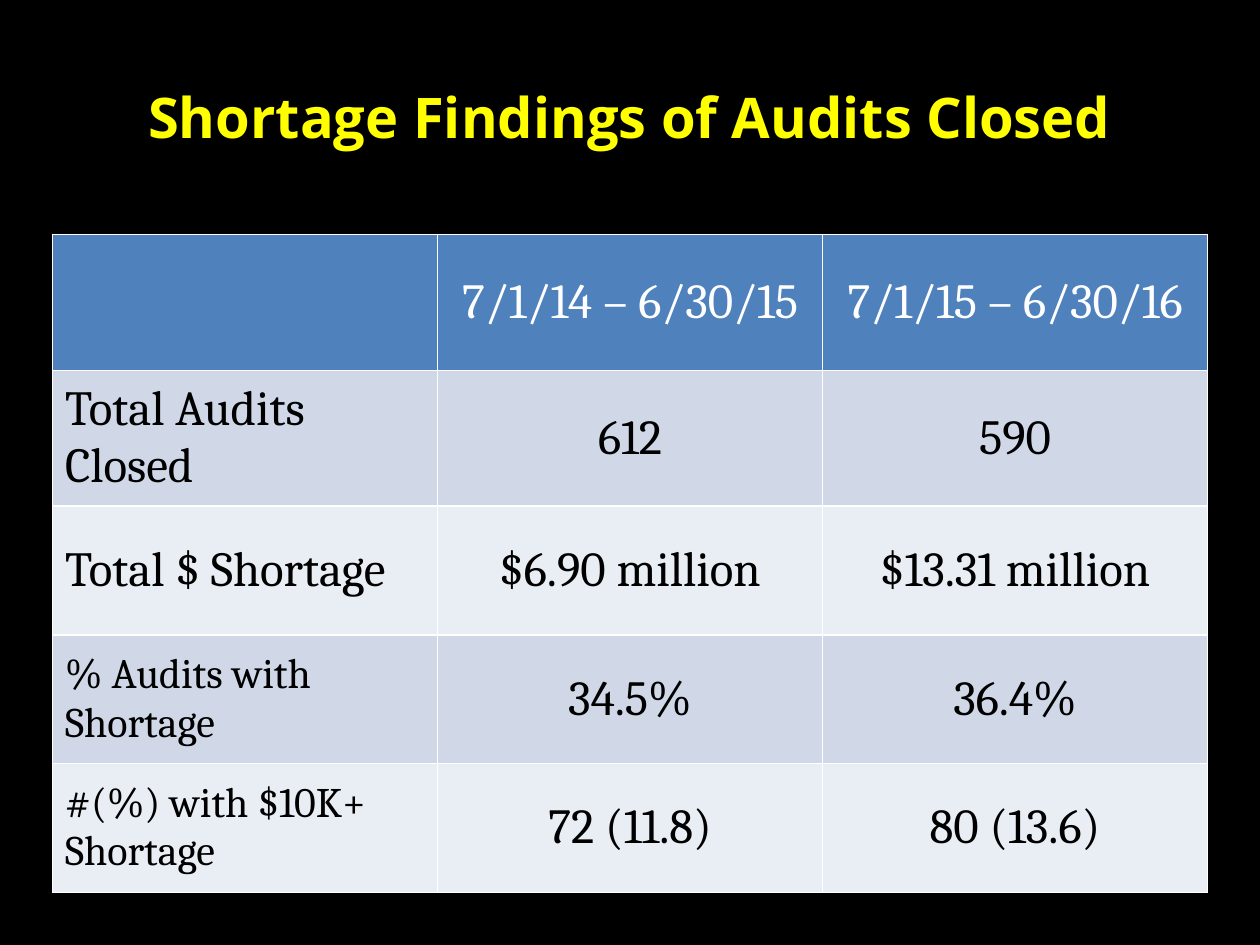
from lxml.etree import SubElement
from pptx import Presentation
from pptx.dml.color import RGBColor
from pptx.enum.text import MSO_ANCHOR, PP_ALIGN
from pptx.oxml.ns import qn
from pptx.util import Pt

HEAD = "4F81BD"
BANDS = ("D0D8E8", "E9EDF4")
WIDTH = 220
HEIGHTS = (77.6, 77.6, 73.6, 73.6, 73.6)
ROWS = (
    ("", "7/1/14 – 6/30/15", "7/1/15 – 6/30/16"),
    ("Total Audits Closed", "612", "590"),
    ("Total $ Shortage", "$6.90 million", "$13.31 million"),
    ("% Audits with Shortage", "34.5%", "36.4%"),
    ("#(%) with $10K+ Shortage", "72 (11.8)", "80 (13.6)"),
)


def color(code):
    return RGBColor.from_string(code)


def write(frame, text, font, size, code, align, bold=False):
    frame.word_wrap = True
    para = frame.paragraphs[0]
    para.alignment = align
    run = para.add_run()
    run.text = text
    run.font.name = font
    run.font.size = Pt(size)
    run.font.bold = bold
    run.font.color.rgb = color(code)


def add_title(slide, text):
    title = slide.shapes.title
    title.left, title.top = Pt(36), Pt(21.6)
    title.width, title.height = Pt(648), Pt(90)
    title.text_frame.vertical_anchor = MSO_ANCHOR.MIDDLE
    write(title.text_frame, text, "Open Sans", 32, "FFFF00", PP_ALIGN.CENTER, True)


def add_lines(cell):
    """Give the cell thin white borders; call before its fill is set."""
    props = cell._tc.get_or_add_tcPr()
    for side in ("a:lnL", "a:lnR", "a:lnT", "a:lnB"):
        line = SubElement(props, qn(side), w=str(Pt(1)))
        fill = SubElement(line, qn("a:solidFill"))
        SubElement(fill, qn("a:srgbClr"), val="FFFFFF")


def fill_cell(cell, text, row, col):
    add_lines(cell)
    cell.fill.solid()
    cell.fill.fore_color.rgb = color(BANDS[(row - 1) % 2] if row else HEAD)
    cell.vertical_anchor = MSO_ANCHOR.MIDDLE
    if text:
        size = 24 if col == 0 and row > 2 else 28
        align = PP_ALIGN.CENTER if col else PP_ALIGN.LEFT
        write(cell.text_frame, text, "Cambria", size,
              "000000" if row else "FFFFFF", align)


def add_grid(slide):
    cols = len(ROWS[0])
    frame = slide.shapes.add_table(len(ROWS), cols, Pt(30), Pt(134),
                                   Pt(WIDTH * cols), Pt(sum(HEIGHTS)))
    table = frame.table
    for col in table.columns:
        col.width = Pt(WIDTH)
    for row, texts in enumerate(ROWS):
        table.rows[row].height = Pt(HEIGHTS[row])
        for col, text in enumerate(texts):
            fill_cell(table.cell(row, col), text, row, col)


def main():
    deck = Presentation()
    deck.slide_width, deck.slide_height = Pt(720), Pt(540)
    slide = deck.slides.add_slide(deck.slide_layouts[5])
    slide.background.fill.solid()
    slide.background.fill.fore_color.rgb = color("000000")
    add_title(slide, "Shortage Findings of Audits Closed")
    add_grid(slide)
    deck.save("out.pptx")


if __name__ == "__main__":
    main()
